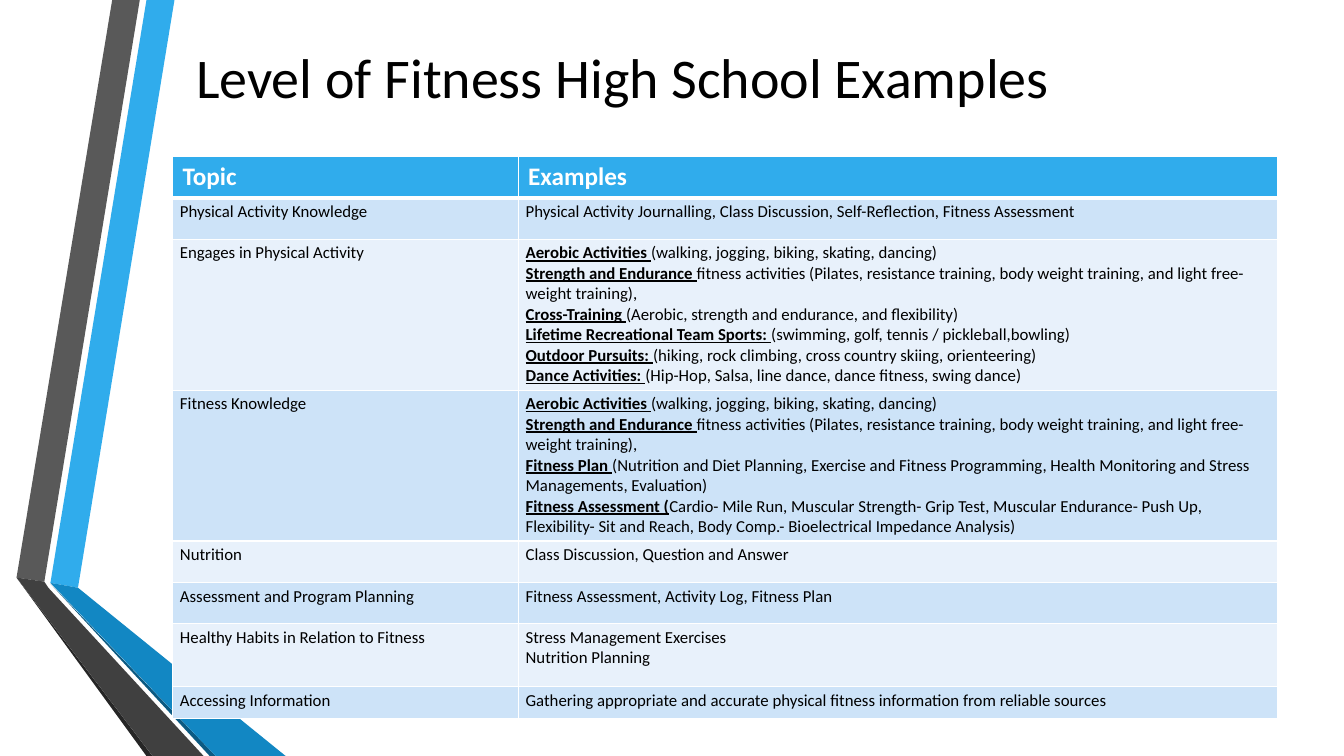
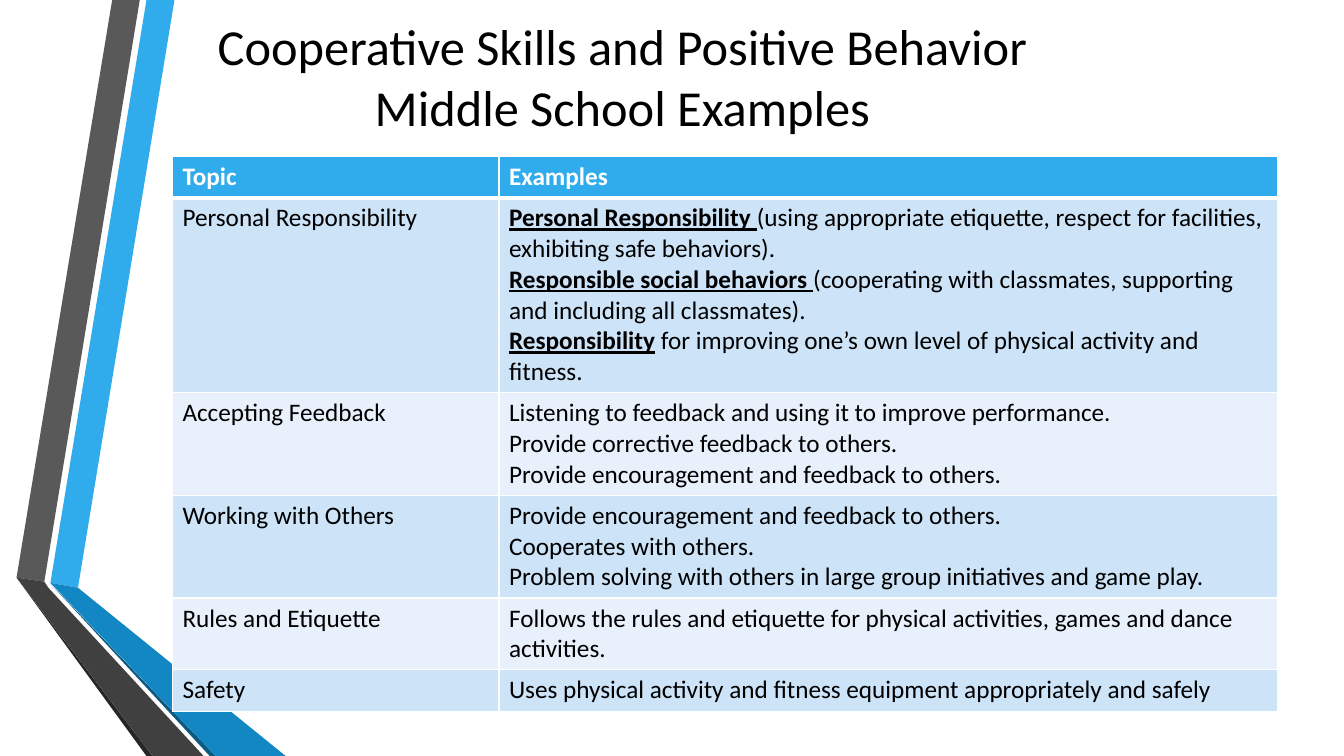
from dataclasses import dataclass
from typing import Any, NamedTuple

from lxml import etree
from pptx import Presentation
from pptx.dml.color import RGBColor
from pptx.enum.text import MSO_ANCHOR, MSO_AUTO_SIZE, PP_ALIGN
from pptx.oxml.ns import qn
from pptx.util import Inches, Pt

CENTER, MIDDLE, FIXED = PP_ALIGN.CENTER, MSO_ANCHOR.MIDDLE, MSO_AUTO_SIZE.NONE
WIDE, HIGH = Inches(13.33), Inches(7.5)
FACE = "Calibri"
BLACK, WHITE, BLUE = "000000", "FFFFFF", "30ACEC"
TINTS = "CDE3F8", "E8F1FB"
LEFT, TOP, SPAN = 12.83, 20.7, 82.2  # table, in percent of the slide
HEAD = 5.47                          # header row height, in percent


class Band(NamedTuple):
    fill: str
    dots: list[tuple[float, float]]  # percent of width and height


class Line(NamedTuple):
    text: str
    lead: str = ""


@dataclass
class Row:
    topic: str
    lines: list[Line]
    high: float


@dataclass
class Page:
    title: str
    size: int
    first: float  # width of the topic column
    body: int
    pad: tuple[float, float]
    rows: list[Row]


BANDS = [
    Band(BLUE, [(3.75, 77.1), (5.8, 77.75), (12.98, 0), (10.9, 0)]),
    Band("595959", [(10.4, 0), (8.35, 0), (1.23, 76.4), (3.3, 76.95)]),
    Band("262626", [(1.23, 76.4), (10.9, 100), (11.35, 100)]),
    Band("0C5A82", [(3.75, 77.2), (15.6, 100), (16.05, 100)]),
    Band("1287C3", [(3.75, 77.1), (16.05, 100), (21.25, 100), (5.8, 77.75)]),
    Band("404040", [(15.15, 100), (3.6, 77.75), (3.3, 76.95), (1.23, 76.4),
                    (11.35, 100)]),
]

MOVES = [
    Line("(walking, jogging, biking, skating, dancing)", "Aerobic Activities "),
    Line("fitness activities (Pilates, resistance training, body weight "
         "training, and light free-weight training),",
         "Strength and Endurance "),
]
CHEER = Line("Provide encouragement and feedback to others.")

PAGES = [
    Page("Level of Fitness High School Examples", 40, 25.72, 12, (5.4, 2.7), [
        Row("Physical Activity Knowledge", [
            Line("Physical Activity Journalling, Class Discussion, "
                 "Self-Reflection, Fitness Assessment")], HEAD),
        Row("Engages in Physical Activity", MOVES + [
            Line("(Aerobic, strength and endurance, and flexibility)",
                 "Cross-Training "),
            Line("(swimming, golf, tennis / pickleball,bowling)",
                 "Lifetime Recreational Team Sports: "),
            Line("(hiking, rock climbing, cross country skiing, orienteering)",
                 "Outdoor Pursuits: "),
            Line("(Hip-Hop, Salsa, line dance, dance fitness, swing dance)",
                 "Dance Activities: ")], 19.95),
        Row("Fitness Knowledge", MOVES + [
            Line("(Nutrition and Diet Planning, Exercise and Fitness "
                 "Programming, Health Monitoring and Stress Managements, "
                 "Evaluation)", "Fitness Plan "),
            Line("Cardio- Mile Run, Muscular Strength- Grip Test, Muscular "
                 "Endurance- Push Up, Flexibility- Sit and Reach, Body Comp.- "
                 "Bioelectrical Impedance Analysis)",
                 "Fitness Assessment (")], 19.95),
        Row("Nutrition", [Line("Class Discussion, Question and Answer")], HEAD),
        Row("Assessment and Program Planning", [
            Line("Fitness Assessment, Activity Log, Fitness Plan")], HEAD),
        Row("Healthy Habits in Relation to Fitness", [
            Line("Stress Management Exercises"),
            Line("Nutrition Planning")], 8.35),
        Row("Accessing Information", [
            Line("Gathering appropriate and accurate physical fitness "
                 "information from reliable sources")], 4.15),
    ]),
    Page("Cooperative Skills and Positive Behavior Middle School Examples",
         36, 24.3, 18, (7.2, 3.6), [
        Row("Personal Responsibility", [
            Line("(using appropriate etiquette, respect for facilities, "
                 "exhibiting safe behaviors).", "Personal Responsibility "),
            Line("(cooperating with classmates, supporting and including all "
                 "classmates).", "Responsible social behaviors "),
            Line(" for improving one’s own level of physical activity and "
                 "fitness.", "Responsibility")], 25.6),
        Row("Accepting Feedback", [
            Line("Listening to feedback and using it to improve performance."),
            Line("Provide corrective feedback to others."), CHEER], 13.6),
        Row("Working with Others", [
            CHEER, Line("Cooperates with others."),
            Line("Problem solving with others in large group initiatives and "
                 "game play.")], 13.6),
        Row("Rules and Etiquette", [
            Line("Follows the rules and etiquette for physical activities, "
                 "games and dance activities.")], 9.5),
        Row("Safety", [
            Line("Uses physical activity and fitness equipment appropriately "
                 "and safely")], HEAD),
    ]),
]


def hue(code: str) -> RGBColor:
    return RGBColor.from_string(code)


def across(share: float) -> int:
    return round(WIDE * share / 100)


def down(share: float) -> int:
    return round(HIGH * share / 100)


def dress(item: Any, form: dict[str, Any]) -> None:
    for key, value in form.items():
        setattr(item, key, value)


def ink(font: Any, size: float, color: str, **more: Any) -> None:
    dress(font, {"name": FACE, "size": Pt(size), **more})
    font.color.rgb = hue(color)


# Bands and title place, shared through the layout
def brand(layout: Any, slide: Any) -> None:
    tree = layout.shapes._spTree
    for rank, band in enumerate(BANDS):
        dots = [(across(x), down(y)) for x, y in band.dots]
        pen = slide.shapes.build_freeform(*dots[0])
        pen.add_line_segments(dots[1:], close=True)
        shape = pen.convert_to_shape()
        shape.shadow.inherit = False
        shape.fill.solid()
        shape.fill.fore_color.rgb = hue(band.fill)
        shape.line.fill.background()
        shape._element.nvSpPr.cNvPr.set("id", str(100 + rank))
        tree.insert(2 + rank, shape._element)
    dress(layout.placeholders[0], {
        "left": across(LEFT), "top": down(3.2),
        "width": across(66.98), "height": down(13.6)})


def head(slide: Any, page: Page) -> None:
    frame = slide.shapes.title.text_frame
    frame.text = page.title
    dress(frame, {"word_wrap": True, "auto_size": FIXED,
                  "vertical_anchor": MIDDLE})
    para = frame.paragraphs[0]
    para.alignment = CENTER
    ink(para.runs[0].font, page.size, BLACK)


# Table parts
def edge(cell: Any, rules: dict[str, int]) -> None:
    props = cell._tc.get_or_add_tcPr()
    for side, points in rules.items():
        rule = etree.SubElement(props, qn(f"a:ln{side}"), w=str(Pt(points)))
        fill = etree.SubElement(rule, qn("a:solidFill"))
        etree.SubElement(fill, qn("a:srgbClr"), val=WHITE)


def fill_cell(cell: Any, lines: list[Line], size: int, color: str, bold: bool,
              back: str, pad: tuple[float, float],
              rules: dict[str, int]) -> None:
    edge(cell, rules)
    cell.fill.solid()
    cell.fill.fore_color.rgb = hue(back)
    side, cap = map(Pt, pad)
    dress(cell, {"margin_left": side, "margin_right": side,
                 "margin_top": cap, "margin_bottom": cap})
    frame = cell.text_frame
    for rank, line in enumerate(lines):
        para = frame.add_paragraph() if rank else frame.paragraphs[0]
        for text, lead in ((line.lead, True), (line.text, False)):
            if text:
                run = para.add_run()
                run.text = text
                ink(run.font, size, color, bold=bold or lead, underline=lead)


def chart_rows(slide: Any, page: Page) -> None:
    highs = [HEAD] + [row.high for row in page.rows]
    grid = slide.shapes.add_table(
        len(highs), 2, across(LEFT), down(TOP),
        across(SPAN), down(sum(highs))).table
    for col, share in zip(grid.columns, (page.first, SPAN - page.first)):
        col.width = across(share)
    for row, share in zip(grid.rows, highs):
        row.height = down(share)
    thin = dict.fromkeys("LRTB", 1)
    for col, text in enumerate(("Topic", "Examples")):
        fill_cell(grid.cell(0, col), [Line(text)], 18, WHITE, True, BLUE,
                  (7.2, 3.6), {**thin, "B": 3})
    for rank, row in enumerate(page.rows):
        rules = thin if rank else {**thin, "T": 3}
        for col, lines in enumerate(([Line(row.topic)], row.lines)):
            fill_cell(grid.cell(rank + 1, col), lines, page.body, BLACK, False,
                      TINTS[rank % 2], page.pad, rules)


def main() -> None:
    deck = Presentation()
    dress(deck, {"slide_width": WIDE, "slide_height": HIGH})
    layout = deck.slide_layouts[5]
    slides = [deck.slides.add_slide(layout) for _ in PAGES]
    brand(layout, slides[0])
    for slide, page in zip(slides, PAGES):
        head(slide, page)
        chart_rows(slide, page)
    deck.save("out.pptx")


if __name__ == "__main__":
    main()
